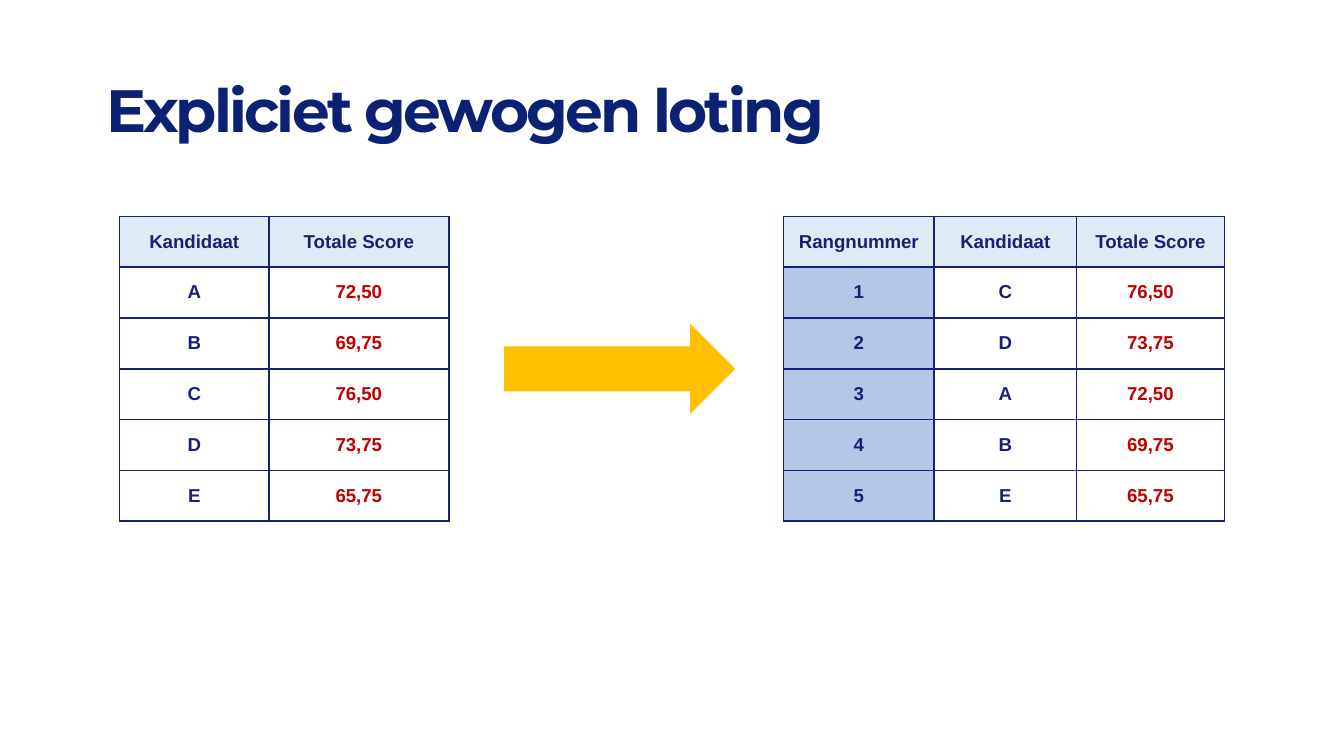
from lxml import etree
from pptx import Presentation
from pptx import util as u
from pptx.dml.color import RGBColor
from pptx.enum import shapes, text
from pptx.oxml.ns import qn

TITLE = "Expliciet gewogen loting"
SCORES = [("A", "72,50"), ("B", "69,75"), ("C", "76,50"), ("D", "73,75"), ("E", "65,75")]
HEAD = ("Kandidaat", "Totale Score")
RANKED = sorted(SCORES, key=lambda row: row[1], reverse=True)
RANKS = [(str(n), *row) for n, row in enumerate(RANKED, 1)]
TABLES = [
    (0.89, (1.11, 1.34), [HEAD, *SCORES]),
    (5.83, (1.12, 1.06, 1.1), [("Rangnummer", *HEAD), *RANKS]),
]
WIDE, HIGH = 10, 10 * 9 / 16
TOP, TALL = 1.61, 2.27
NAVY, RED, WHITE = "182075", "C00000", "FFFFFF"
FILLS = {"Rangnummer": "B4C7E7"}


def color(code):
    """Turn a hex string into a colour."""
    return RGBColor.from_string(code)


def style(para, name, size, code, align):
    """Format one bold paragraph."""
    para.alignment = align
    font = para.font
    font.name, font.size, font.bold, font.italic = name, u.Pt(size), True, False
    font.color.rgb = color(code)


def border(cell):
    """Draw navy lines on all four sides of a cell."""
    props = cell._tc.get_or_add_tcPr()
    for n, side in enumerate(("lnL", "lnR", "lnT", "lnB")):
        line = etree.Element(qn("a:" + side), w=str(u.Pt(1)))
        fill = etree.SubElement(line, qn("a:solidFill"))
        etree.SubElement(fill, qn("a:srgbClr"), val=NAVY)
        props.insert(n, line)


def grid(slide, left, widths, rows):
    """Add a table with a light head row and red scores."""
    box = [u.Inches(v) for v in (left, TOP, sum(widths), TALL)]
    table = slide.shapes.add_table(len(rows), len(widths), *box).table
    for col, width in zip(table.columns, widths):
        col.width = u.Inches(width)
    for r, row in enumerate(rows):
        for c, word in enumerate(row):
            cell = table.cell(r, c)
            cell.text = word
            cell.vertical_anchor = text.MSO_ANCHOR.MIDDLE
            cell.fill.solid()
            cell.fill.fore_color.rgb = color(FILLS.get(rows[0][c], WHITE) if r else "DEEBF7")
            score = r and rows[0][c] == HEAD[1]
            para = cell.text_frame.paragraphs[0]
            style(para, "Arial", 10, RED if score else NAVY, text.PP_ALIGN.CENTER)
            border(cell)


def main():
    """Build the slide and save it."""
    deck = Presentation()
    deck.slide_width, deck.slide_height = u.Inches(WIDE), u.Inches(HIGH)
    slide = deck.slides.add_slide(deck.slide_layouts[5])

    title = slide.shapes.title
    title.left, title.top, title.width, title.height = map(u.Inches, (0.69, 0.3, 8.62, 1.09))
    frame = title.text_frame
    frame.text = TITLE
    frame.auto_size = text.MSO_AUTO_SIZE.NONE
    frame.vertical_anchor = text.MSO_ANCHOR.MIDDLE
    para = frame.paragraphs[0]
    para.line_spacing = 0.9
    style(para, "Montserrat", 32, "0C2074", text.PP_ALIGN.LEFT)
    para.runs[0]._r.get_or_add_rPr().set("spc", "-150")

    for left, widths, rows in TABLES:
        grid(slide, left, widths, rows)

    box = map(u.Inches, (3.75, 2.41, 1.72, 0.67))
    arrow = slide.shapes.add_shape(shapes.MSO_SHAPE.RIGHT_ARROW, *box)
    arrow.shadow.inherit = False
    arrow.fill.solid()
    arrow.fill.fore_color.rgb = color("FFC000")
    arrow.line.fill.background()
    deck.save("out.pptx")


if __name__ == "__main__":
    main()
